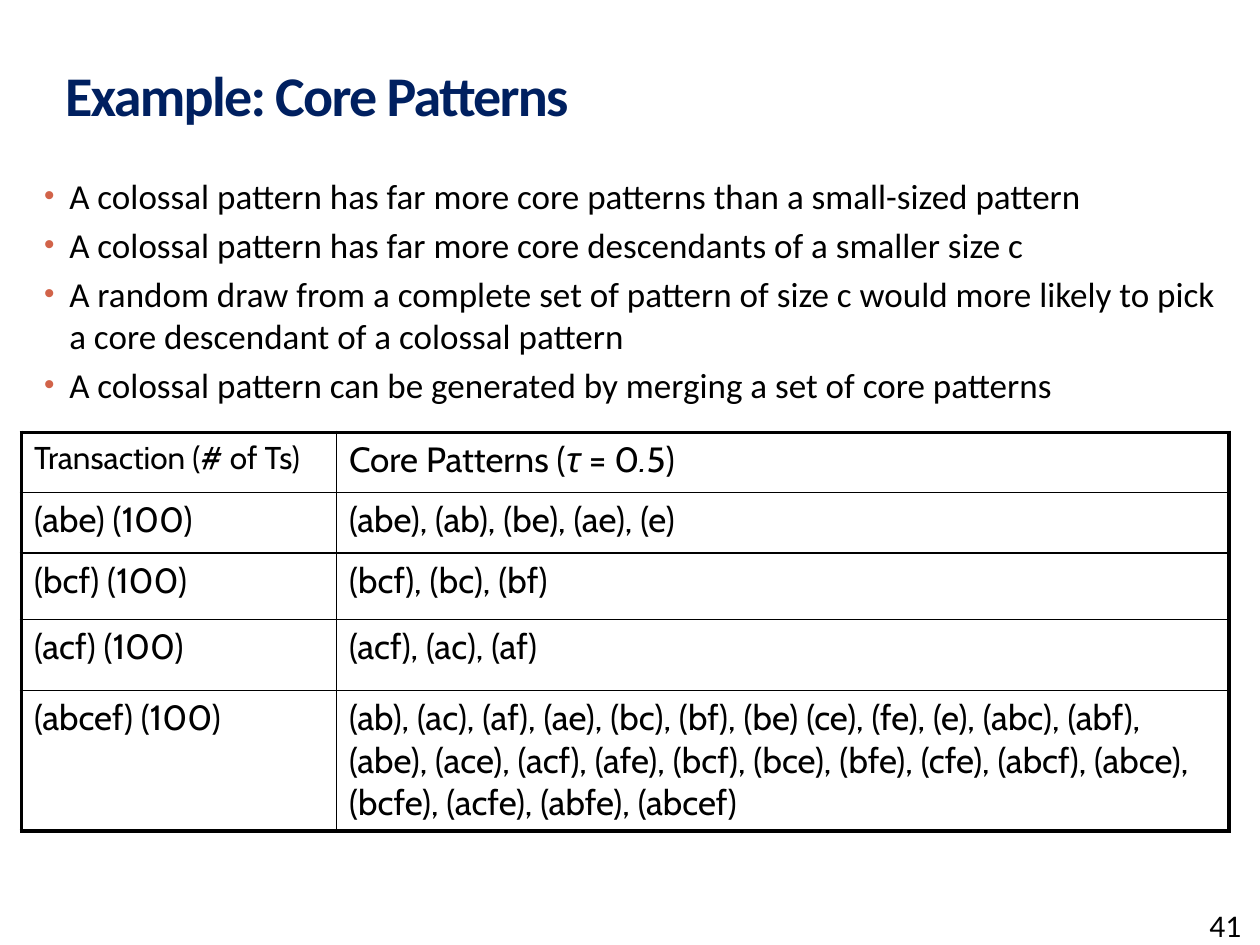
"""Build the slide on core patterns of colossal patterns."""
from dataclasses import dataclass

from lxml import etree
from pptx import Presentation
from pptx import util as u
from pptx.dml.color import RGBColor
from pptx.enum import text
from pptx.oxml.ns import qn


@dataclass(frozen=True)
class Theme:
    heading: str = "002060"
    ink: str = "000000"
    bullet: str = "D16349"
    font: str = "Calibri"
    table_font: str = "Cabin"
    title_size: int = 32
    body_size: int = 20
    small_size: int = 18
    outer_line: float = 2.25
    inner_line: float = 1


THEME = Theme()
TITLE = "Example: Core Patterns"
POINTS = [
    "A colossal pattern has far more core patterns than a small-sized pattern",
    "A colossal pattern has far more core descendants of a smaller size c",
    "A random draw from a complete set of pattern of size c would more likely to pick "
    "a core descendant of a colossal pattern",
    "A colossal pattern can be generated by merging a set of core patterns",
]
HEADER = [
    [("Transaction (# of Ts)", False)],
    [("Core Patterns (", False), ("τ ", True), ("= 0", False), (".", True), ("5)", False)],
]
TRANSACTIONS = [
    ("(abe) (100)", "(abe), (ab), (be), (ae), (e)"),
    ("(bcf) (100)", "(bcf), (bc), (bf)"),
    ("(acf) (100)", "(acf), (ac), (af)"),
    ("(abcef) (100)",
     "(ab), (ac), (af), (ae), (bc), (bf), (be) (ce), (fe), (e), (abc), (abf), (abe), "
     "(ace), (acf), (afe), (bcf), (bce), (bfe), (cfe), (abcf), (abce), (bcfe), (acfe), "
     "(abfe), (abcef)"),
]
PAGE_NUMBER = "41"

TITLE_BOX = (30, 30, 654, 48)
BODY_BOX = (18, 96, 684, 144)
PAGE_BOX = (684, 514, 36, 26)
TABLE_ORIGIN = (12.24, 247)
COLUMN_WIDTHS = [180, 510]
ROW_HEIGHTS = [34.5, 34.5, 38, 40.5, 80]
INDENT = 14.4


def place(shape, box):
    shape.left, shape.top, shape.width, shape.height = map(u.Pt, box)
    shape.text_frame.word_wrap = True
    shape.text_frame.auto_size = text.MSO_AUTO_SIZE.NONE


def add_run(paragraph, words, size, font=THEME.font, color=THEME.ink, bold=False, italic=False):
    run = paragraph.add_run()
    run.text = words
    run.font.name, run.font.size = font, u.Pt(size)
    run.font.bold, run.font.italic = bold, italic
    run.font.color.rgb = RGBColor.from_string(color)
    return run


def add_bullet(paragraph):
    properties = paragraph._p.get_or_add_pPr()
    properties.set("marL", str(u.Pt(INDENT)))
    properties.set("indent", str(u.Pt(-INDENT)))
    color = etree.SubElement(properties, qn("a:buClr"))
    etree.SubElement(color, qn("a:srgbClr"), val=THEME.bullet)
    etree.SubElement(properties, qn("a:buSzPct"), val="85000")
    etree.SubElement(properties, qn("a:buFont"), typeface="Arial")
    etree.SubElement(properties, qn("a:buChar"), char="•")


def set_borders(cell, widths):
    properties = cell._tc.get_or_add_tcPr()
    for position, (side, width) in enumerate(zip("LRTB", widths)):
        line = etree.Element(qn(f"a:ln{side}"), w=str(u.Pt(width)))
        fill = etree.SubElement(line, qn("a:solidFill"))
        etree.SubElement(fill, qn("a:srgbClr"), val=THEME.ink)
        properties.insert(position, line)


def add_title(slide):
    title = slide.shapes.title
    place(title, TITLE_BOX)
    title.text_frame.vertical_anchor = text.MSO_ANCHOR.MIDDLE
    paragraph = title.text_frame.paragraphs[0]
    paragraph.alignment = text.PP_ALIGN.LEFT
    run = add_run(paragraph, TITLE, THEME.title_size, color=THEME.heading, bold=True)
    run._r.get_or_add_rPr().set("spc", "-100")


def add_points(slide):
    body = slide.placeholders[1]
    place(body, BODY_BOX)
    frame = body.text_frame
    for index, point in enumerate(POINTS):
        paragraph = frame.add_paragraph() if index else frame.paragraphs[0]
        paragraph.space_before = u.Pt(0.2 * THEME.body_size)
        add_bullet(paragraph)
        add_run(paragraph, point, THEME.body_size)


def add_pattern_table(slide):
    rows = [HEADER] + [[[(words, False)] for words in row] for row in TRANSACTIONS]
    box = (*TABLE_ORIGIN, sum(COLUMN_WIDTHS), sum(ROW_HEIGHTS))
    table = slide.shapes.add_table(len(rows), len(COLUMN_WIDTHS), *map(u.Pt, box)).table
    table.first_row = table.horz_banding = False
    for column, width in zip(table.columns, COLUMN_WIDTHS):
        column.width = u.Pt(width)
    for row, height in zip(table.rows, ROW_HEIGHTS):
        row.height = u.Pt(height)
    last_row, last_column = len(rows) - 1, len(COLUMN_WIDTHS) - 1
    for r, row in enumerate(rows):
        for c, runs in enumerate(row):
            cell = table.cell(r, c)
            cell.fill.background()
            edges = (c == 0, c == last_column, r == 0, r == last_row)
            set_borders(cell, [THEME.outer_line if edge else THEME.inner_line for edge in edges])
            size = THEME.small_size if r == c == 0 else THEME.body_size
            paragraph = cell.text_frame.paragraphs[0]
            paragraph.space_before = u.Pt(0.2 * size)
            for words, italic in runs:
                add_run(paragraph, words, size, THEME.table_font, italic=italic)


def add_page_number(slide):
    box = slide.shapes.add_textbox(*map(u.Pt, PAGE_BOX))
    place(box, PAGE_BOX)
    add_run(box.text_frame.paragraphs[0], PAGE_NUMBER, THEME.small_size)


def main():
    presentation = Presentation()
    presentation.slide_width, presentation.slide_height = u.Pt(720), u.Pt(540)
    slide = presentation.slides.add_slide(presentation.slide_layouts[1])
    add_title(slide)
    add_points(slide)
    add_pattern_table(slide)
    add_page_number(slide)
    presentation.save("out.pptx")


if __name__ == "__main__":
    main()
